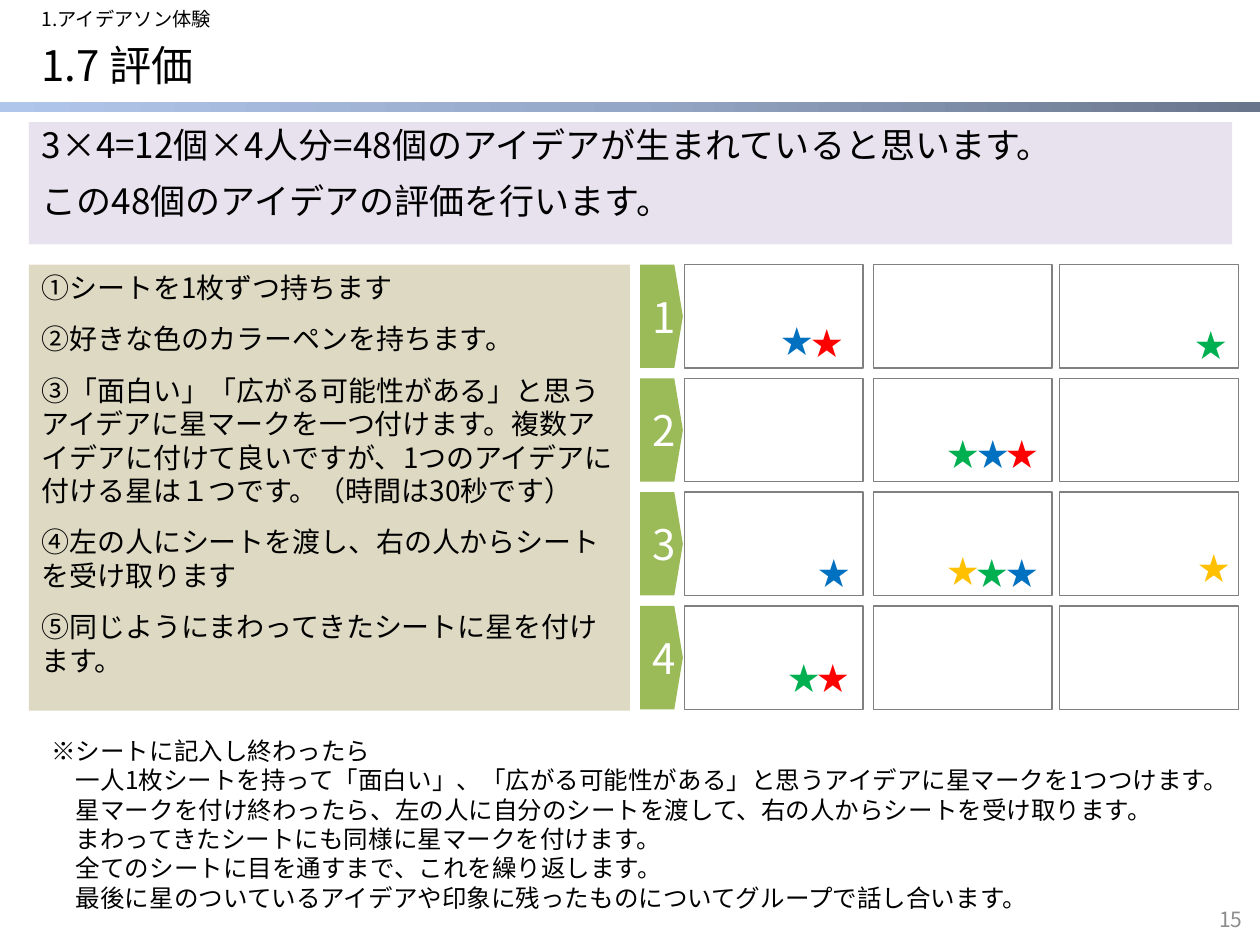
from copy import deepcopy

from pptx import Presentation
from pptx.dml.color import RGBColor
from pptx.enum.shapes import MSO_SHAPE
from pptx.enum.text import MSO_ANCHOR, MSO_AUTO_SIZE, PP_ALIGN
from pptx.oxml.ns import qn
from pptx.oxml.xmlchemy import OxmlElement
from pptx.util import Inches, Pt

FONT = "Noto Sans CJK JP"
RECT, BADGE = MSO_SHAPE.RECTANGLE, MSO_SHAPE.FLOWCHART_OFFPAGE_CONNECTOR
TOP, MIDDLE = MSO_ANCHOR.TOP, MSO_ANCHOR.MIDDLE
LEFT, CENTER, RIGHT = PP_ALIGN.LEFT, PP_ALIGN.CENTER, PP_ALIGN.RIGHT
FIXED, GROW = MSO_AUTO_SIZE.NONE, MSO_AUTO_SIZE.SHAPE_TO_FIT_TEXT

BLACK = RGBColor(0x00, 0x00, 0x00)
WHITE = RGBColor(0xFF, 0xFF, 0xFF)
GRAY = RGBColor(0x80, 0x80, 0x80)
NUMBER_GRAY = RGBColor(0x8C, 0x8C, 0x8C)
LILAC = RGBColor(0xCC, 0xC1, 0xDA)
SAND = RGBColor(0xDD, 0xD9, 0xC3)
LEAF = RGBColor(0x9B, 0xBB, 0x59)
RED = RGBColor(0xFF, 0x00, 0x00)
BLUE = RGBColor(0x00, 0x70, 0xC0)
GREEN = RGBColor(0x00, 0xB0, 0x50)
YELLOW = RGBColor(0xFF, 0xC0, 0x00)
BAR_COLORS = [RGBColor(0x69, 0x75, 0x8B), RGBColor(0x95, 0xA7, 0xC6),
              RGBColor(0xB1, 0xC6, 0xEB)]


def write(sp, lines, size, color=BLACK, frame=None, para=None):
    """Fill a shape with one paragraph per line; frame and para hold formats."""
    tf = sp.text_frame
    for name, value in {"word_wrap": True, "vertical_anchor": TOP, **(frame or {})}.items():
        setattr(tf, name, value)
    for i, line in enumerate(lines):
        p = tf.add_paragraph() if i else tf.paragraphs[0]
        for name, value in {"alignment": LEFT, **(para or {})}.items():
            setattr(p, name, value)
        r = p.add_run()
        r.text = line
        for name, value in {"size": Pt(size), "name": FONT, "bold": False}.items():
            setattr(r.font, name, value)
        r.font.color.rgb = color
        ea = OxmlElement("a:ea")
        ea.set("typeface", FONT)
        r.font._element.find(qn("a:latin")).addnext(ea)


def add_box(kind, left, top, width, height):
    sp = s.shapes.add_shape(kind, Inches(left), Inches(top), Inches(width), Inches(height))
    sp.shadow.inherit = False
    return sp


prs = Presentation()
prs.slide_width, prs.slide_height = Inches(10), Inches(7.5)
s = prs.slides.add_slide(prs.slide_layouts[4])
ph = {sp.placeholder_format.idx: sp for sp in s.placeholders}
ph[4]._element.getparent().remove(ph[4]._element)

# Gradient bar under the title
bar = add_box(RECT, 0, 0.81, 10, 0.08)
bar.line.fill.background()
bar.fill.gradient()
bar.fill.gradient_angle = 180
stops = bar._element.spPr.find(qn("a:gradFill")).find(qn("a:gsLst"))
stops.append(deepcopy(stops[0]))
for i, (stop, color) in enumerate(zip(bar.fill.gradient_stops, BAR_COLORS)):
    stop.position = i / 2
    stop.color.rgb = color

# Title, section name, summary and steps
tight = {"line_spacing": 0.9, "space_before": Pt(10)}
steps = [
    "①シートを1枚ずつ持ちます",
    "②好きな色のカラーペンを持ちます。",
    "③「面白い」「広がる可能性がある」と思うアイデアに星マークを一つ付けます。"
    "複数アイデアに付けて良いですが、1つのアイデアに付ける星は１つです。（時間は30秒です）",
    "④左の人にシートを渡し、右の人からシートを受け取ります",
    "⑤同じようにまわってきたシートに星を付けます。",
]
summary = ["3×4=12個×4人分=48個のアイデアが生まれていると思います。",
           "この48個のアイデアの評価を行います。"]
texts = [
    (0, (0.23, 0.31, 8.27, 0.46), ["1.7 評価"], 24, None,
     {"vertical_anchor": MIDDLE, "word_wrap": False}, {"line_spacing": 0.9}),
    (1, (0.23, 0.03, 8.24, 0.24), ["1.アイデアソン体験"], 11, None, {}, tight),
    (3, (0.23, 0.97, 9.55, 0.97), summary, 20, LILAC, {}, tight),
    (2, (0.23, 2.1, 4.77, 3.54), steps, 16, SAND, {}, {"space_before": Pt(10)}),
]
for idx, place, lines, size, fill, frame, para in texts:
    sp = ph[idx]
    sp.left, sp.top, sp.width, sp.height = map(Inches, place)
    write(sp, lines, size, frame={"auto_size": FIXED, **frame}, para=para)
    if fill:
        sp.fill.solid()
        sp.fill.fore_color.rgb = fill
    if idx:
        for p in sp.text_frame.paragraphs:
            pPr = p._p.get_or_add_pPr()
            pPr.set("marL", "0")
            pPr.set("indent", "0")
            pPr.append(OxmlElement("a:buNone"))
alpha = OxmlElement("a:alpha")
alpha.set("val", "46000")
ph[3]._element.spPr.find(qn("a:solidFill"))[0].append(alpha)

# Numbered sheets with three idea cells each
ROW_TOP, ROW_STEP, ROW_HEIGHT = 2.1, 0.903, 0.82
for row in range(4):
    top = ROW_TOP + row * ROW_STEP
    badge = add_box(BADGE, 4.84, top + 0.24, ROW_HEIGHT, 0.34)
    badge.rotation = 270
    badge.fill.solid()
    badge.fill.fore_color.rgb = LEAF
    badge.line.fill.background()
    write(badge, [str(row + 1)], 24, WHITE, {"vertical_anchor": MIDDLE}, {"alignment": CENTER})
    badge.text_frame._txBody.bodyPr.set("vert", "eaVert")
    for left in (5.43, 6.93, 8.41):
        cell = add_box(RECT, left, top, 1.42, ROW_HEIGHT)
        cell.fill.background()
        cell.line.color.rgb = GRAY
        cell.line.width = Pt(0.75)

# Votes
stars = {
    RED: [(6.34, 2.52), (7.89, 3.4), (6.39, 5.18)],
    BLUE: [(6.1, 2.51), (6.4, 4.35), (7.89, 4.35), (7.66, 3.4)],
    GREEN: [(7.42, 3.4), (9.39, 2.54), (7.65, 4.35), (6.16, 5.18)],
    YELLOW: [(7.42, 4.33), (9.41, 4.31)],
}
for color, places in stars.items():
    for left, top in places:
        star = s.shapes.add_textbox(Inches(left), Inches(top), Inches(0.45), Inches(0.4))
        write(star, ["★"], 18, color, {"word_wrap": False, "auto_size": GROW})

# Slide number
number = s.shapes.add_textbox(Inches(9.41), Inches(7.14), Inches(0.55), Inches(0.31))
write(number, ["15"], 12, NUMBER_GRAY, {"vertical_anchor": MIDDLE}, {"alignment": RIGHT})

# Closing note
note = s.shapes.add_textbox(Inches(0.31), Inches(5.79), Inches(9.7), Inches(1.51))
write(note, [
    "※シートに記入し終わったら",
    "　一人1枚シートを持って「面白い」、「広がる可能性がある」と思うアイデアに星マークを1つつけます。",
    "　星マークを付け終わったら、左の人に自分のシートを渡して、右の人からシートを受け取ります。",
    "　まわってきたシートにも同様に星マークを付けます。",
    "　全てのシートに目を通すまで、これを繰り返します。",
    "　最後に星のついているアイデアや印象に残ったものについてグループで話し合います。",
], 14, frame={"auto_size": GROW})

prs.save("out.pptx")
